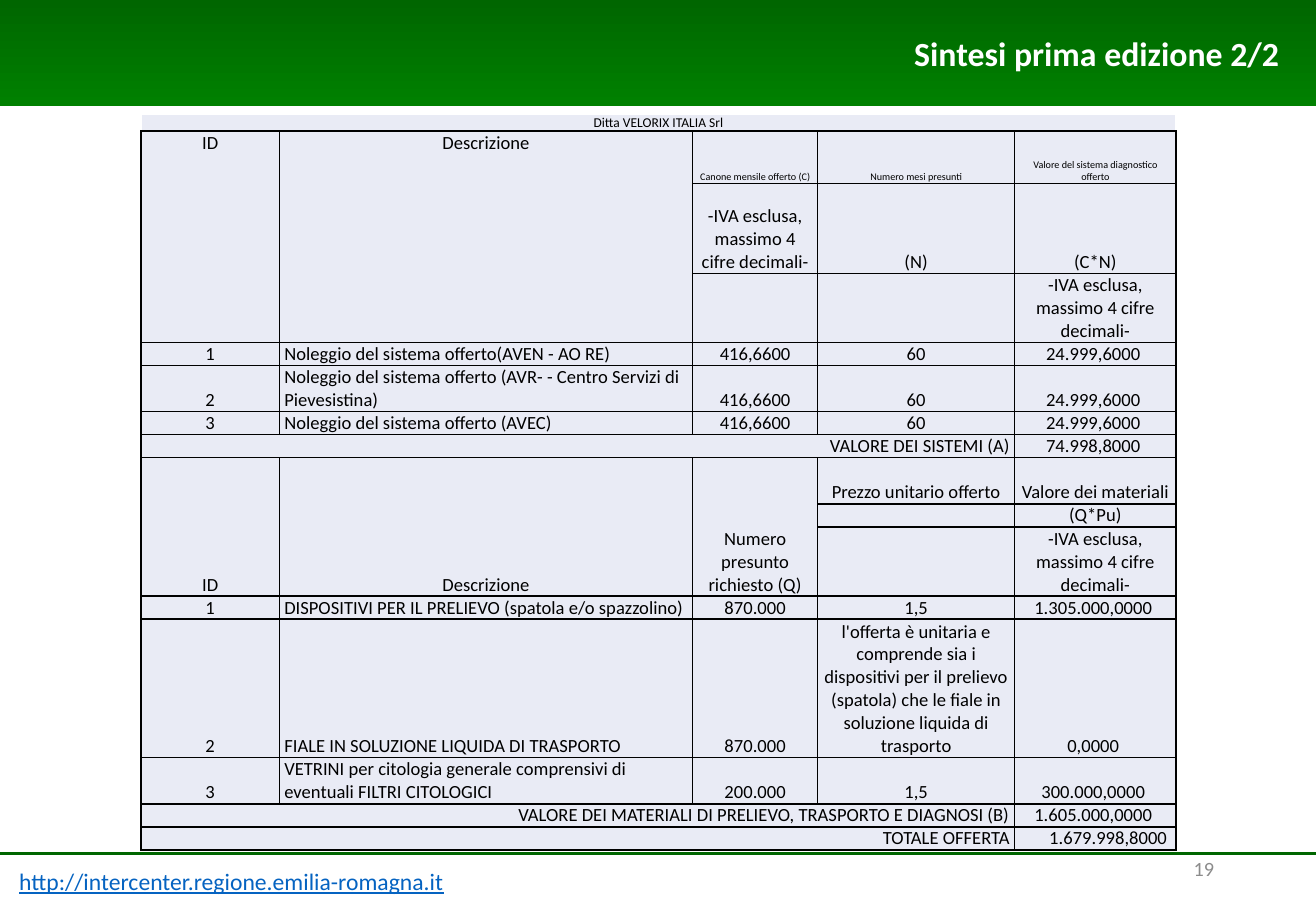
from lxml.etree import SubElement
from pptx import Presentation
from pptx.dml.color import RGBColor
from pptx.enum.shapes import MSO_CONNECTOR, MSO_SHAPE
from pptx.enum.text import MSO_ANCHOR as ANCHOR, MSO_AUTO_SIZE, PP_ALIGN as ALIGN
from pptx.oxml.ns import qn
from pptx.util import Inches, Pt

FONT = "Calibri"
WIDTH, HEIGHT = 10.83, 7.5
CELL_FILL = "E9EBF5"
VAT_NOTE = "-IVA esclusa, massimo 4 cifre decimali-"
UNIT_NOTE = ("l'offerta è unitaria e comprende sia i dispositivi per il prelievo "
             "(spatola) che le fiale in soluzione liquida di trasporto")

COLUMNS = [1.14, 3.4, 1.03, 1.62, 1.33]
# Row height, then the text of the five columns
ROWS = [
    (0.14, "Ditta VELORIX ITALIA Srl", "", "", "", ""),
    (0.43, "ID", "Descrizione", "Canone mensile offerto (C)", "Numero mesi presunti",
     "Valore del sistema diagnostico offerto"),
    (0.74, "", "", VAT_NOTE, "(N)", "(C*N)"),
    (0.57, "", "", "", "", VAT_NOTE),
    (0.19, "1", "Noleggio del sistema offerto(AVEN - AO RE)", "416,6600", "60", "24.999,6000 "),
    (0.38, "2", "Noleggio del sistema offerto (AVR- - Centro Servizi di Pievesistina)",
     "416,6600", "60", "24.999,6000 "),
    (0.19, "3", "Noleggio del sistema offerto (AVEC)", "416,6600", "60", "24.999,6000 "),
    (0.19, "VALORE DEI SISTEMI (A)", "", "", "", "74.998,8000 "),
    (0.38, "ID", "Descrizione", "Numero presunto richiesto (Q)", "Prezzo unitario offerto",
     "Valore dei materiali"),
    (0.19, "", "", "", "", "(Q*Pu)"),
    (0.57, "", "", "", "", VAT_NOTE),
    (0.19, "1", "DISPOSITIVI PER IL PRELIEVO (spatola e/o spazzolino)", "870.000", "1,5",
     "1.305.000,0000 "),
    (1.14, "2", "FIALE IN SOLUZIONE LIQUIDA DI TRASPORTO", "870.000", UNIT_NOTE, "0,0000 "),
    (0.38, "3", "VETRINI per citologia generale comprensivi di eventuali FILTRI CITOLOGICI",
     "200.000", "1,5", "300.000,0000 "),
    (0.19, "VALORE DEI MATERIALI DI PRELIEVO, TRASPORTO E DIAGNOSI (B)", "", "", "",
     "1.605.000,0000 "),
    (0.19, "TOTALE OFFERTA", "", "", "", "1.679.998,8000 "),
]
CAPTION_ROW, FIRST_HEADER, SECOND_HEADER, GRAND_TOTAL = 0, 1, 8, 15
HEADER_DEPTH = 3
TOTAL_ROWS = (7, 14, GRAND_TOTAL)


def rgb(value):
    return RGBColor.from_string(value)


def write(frame, text, size=11, color="000000", bold=False, underline=False,
          align=ALIGN.LEFT, spacing=None):
    para = frame.paragraphs[0]
    para.alignment = align
    para.line_spacing = spacing
    if not text:
        SubElement(para.runs and para.runs[0].font or frame.paragraphs[0]._p,
                   qn("a:endParaRPr"), sz=str(size * 100))
        return
    span = para.add_run()
    span.text = text
    font = span.font
    font.name, font.size, font.bold = FONT, Pt(size), bold
    font.underline = underline
    font.color.rgb = rgb(color)


def add_text(page, left, top, width, height, text, anchor=ANCHOR.TOP, **text_format):
    box = page.shapes.add_textbox(Inches(left), Inches(top), Inches(width), Inches(height))
    frame = box.text_frame
    frame.word_wrap = True
    frame.auto_size = MSO_AUTO_SIZE.NONE
    frame.vertical_anchor = anchor
    write(frame, text, **text_format)


def add_band(page):
    band = page.shapes.add_shape(MSO_SHAPE.RECTANGLE, 0, 0, Inches(WIDTH), Inches(0.87))
    band.shadow.inherit = False
    band.line.fill.background()
    band.fill.gradient()
    band.fill.gradient_angle = 270
    for stop, color in zip(band.fill.gradient_stops, ("006600", "008000")):
        stop.color.rgb = rgb(color)


def add_rule(page, top):
    rule = page.shapes.add_connector(MSO_CONNECTOR.STRAIGHT, 0, Inches(top),
                                     Inches(WIDTH), Inches(top))
    rule.line.color.rgb = rgb("006600")
    rule.line.width = Pt(1.75)
    SubElement(rule.element.spPr, qn("a:effectLst"))


def set_title(page, text):
    title = page.shapes.title
    title.left, title.top = Inches(0.45), Inches(0.12)
    title.width, title.height = Inches(10.18), Inches(0.67)
    title.text_frame.vertical_anchor = ANCHOR.MIDDLE
    write(title.text_frame, text, size=20, color="FFFFFF", bold=True,
          align=ALIGN.RIGHT, spacing=0.9)
    # Bring the title in front of the band
    title.element.getparent().append(title.element)


def set_borders(cell, white_sides=""):
    properties = cell._tc.get_or_add_tcPr()
    for side in "LRTB":
        line = SubElement(properties, qn(f"a:ln{side}"), w=str(Pt(1)))
        fill = SubElement(line, qn("a:solidFill"))
        SubElement(fill, qn("a:srgbClr"), val="FFFFFF" if side in white_sides else "000000")


def cell_align(row, column):
    if row in TOTAL_ROWS and (column == 0 or row == GRAND_TOTAL):
        return ALIGN.RIGHT
    if column == 1 and row not in (FIRST_HEADER, SECOND_HEADER):
        return ALIGN.LEFT
    return ALIGN.CENTER


def cell_size(row, column):
    if row == CAPTION_ROW:
        return 8
    return 6 if row == FIRST_HEADER and column >= 2 else 11


def add_offer_table(page):
    table = page.shapes.add_table(len(ROWS), len(COLUMNS), Inches(1.16), Inches(0.94),
                                  Inches(sum(COLUMNS)),
                                  Inches(sum(row[0] for row in ROWS))).table
    table.first_row = table.horz_banding = False
    for column, width in zip(table.columns, COLUMNS):
        column.width = Inches(width)
    for i, (height, *texts) in enumerate(ROWS):
        table.rows[i].height = Inches(height)
        for j, text in enumerate(texts):
            cell = table.cell(i, j)
            cell.margin_left = cell.margin_right = Inches(0.04)
            cell.margin_top = cell.margin_bottom = 0
            top_label = i == FIRST_HEADER and j < 2
            cell.vertical_anchor = ANCHOR.TOP if top_label else ANCHOR.BOTTOM
            set_borders(cell, white_sides="LRT" if i == CAPTION_ROW else "")
            cell.fill.solid()
            cell.fill.fore_color.rgb = rgb(CELL_FILL)
            write(cell.text_frame, text, size=cell_size(i, j), align=cell_align(i, j))

    table.cell(CAPTION_ROW, 0).merge(table.cell(CAPTION_ROW, 4))
    for i in TOTAL_ROWS:
        table.cell(i, 0).merge(table.cell(i, 3))
    for top, merged_columns in ((FIRST_HEADER, 2), (SECOND_HEADER, 3)):
        for j in range(merged_columns):
            table.cell(top, j).merge(table.cell(top + HEADER_DEPTH - 1, j))


def main():
    deck = Presentation()
    deck.slide_width, deck.slide_height = Inches(WIDTH), Inches(HEIGHT)
    page = deck.slides.add_slide(deck.slide_layouts[5])
    add_band(page)
    add_text(page, 0.06, 7.09, 4.81, 0.34, "http://intercenter.regione.emilia-romagna.it",
             size=14, color="0563C1", underline=True)
    add_rule(page, 7.03)
    set_title(page, "Sintesi prima edizione 2/2")
    add_offer_table(page)
    add_text(page, 7.65, 6.95, 2.44, 0.4, "19", anchor=ANCHOR.MIDDLE,
             size=12, color="8C8C8C", align=ALIGN.RIGHT)
    deck.save("out.pptx")


if __name__ == "__main__":
    main()
